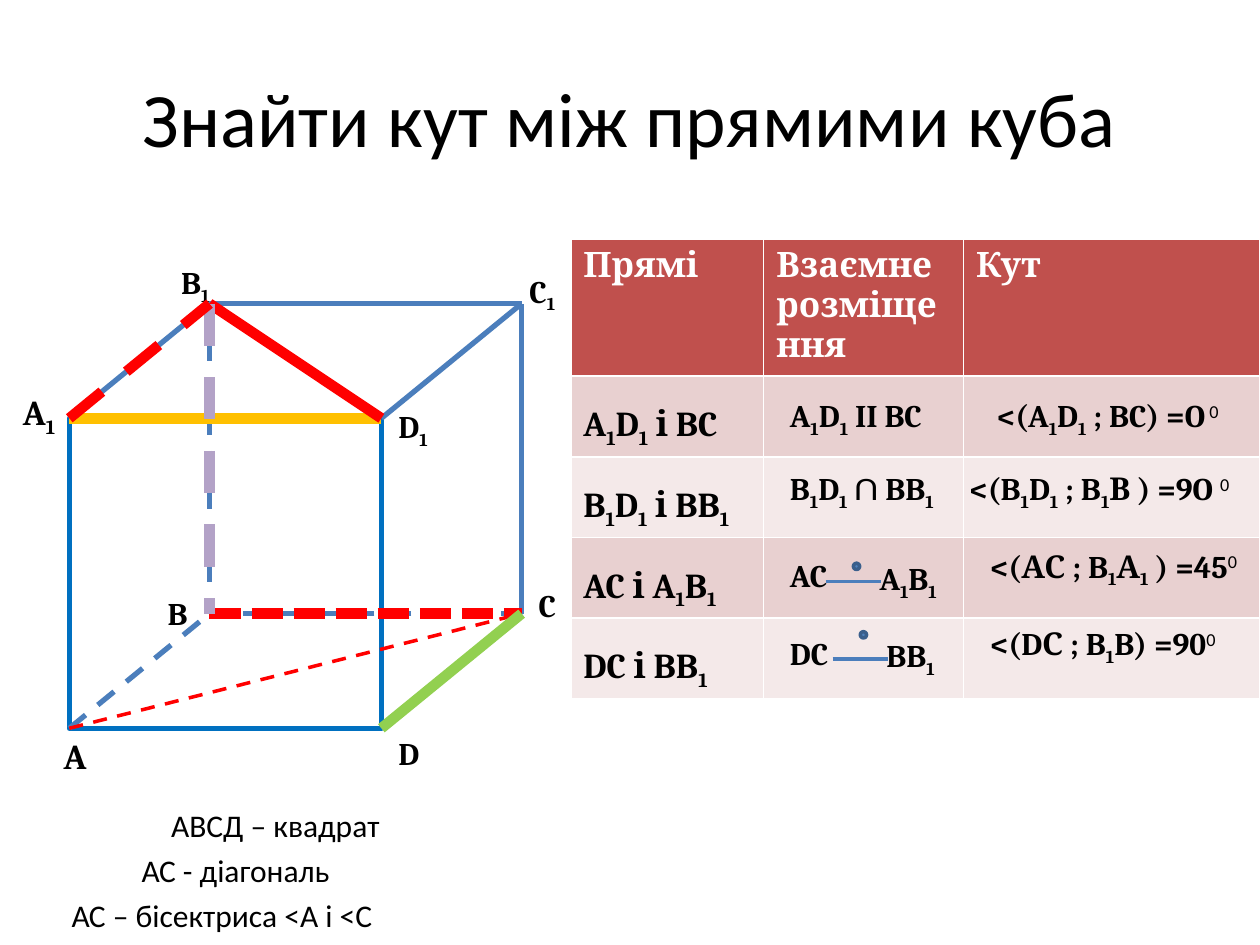
from collections import namedtuple
from dataclasses import dataclass

from lxml.etree import SubElement
from pptx import Presentation
from pptx.dml.color import RGBColor
from pptx.enum.dml import MSO_LINE as Dash
from pptx.enum.shapes import MSO_CONNECTOR as Link, MSO_SHAPE as Preset
from pptx.enum.text import MSO_ANCHOR as Anchor, PP_ALIGN as Align
from pptx.oxml.ns import qn
from pptx.util import Inches, Pt

Box = namedtuple("Box", "left top width height")


@dataclass(frozen=True)
class Theme:
    """Colours, fonts and type sizes of the slide."""
    ink: str = "000000"
    white: str = "FFFFFF"
    edge: str = "4B7EBC"
    front: str = "0070C0"
    red: str = "FF0000"
    gold: str = "FFC000"
    lilac: str = "B3A2C7"
    green: str = "92D050"
    dot: str = "4F81BD"
    dot_line: str = "3A5F8C"
    header: str = "C0504D"
    bands: tuple = ("E8D0D0", "F4E9E9")
    body_font: str = "Calibri"
    math_font: str = "Cambria"
    title_size: int = 44
    large: int = 20
    normal: int = 18


THEME = Theme()


def rgb(code):
    """Turn a hex code into a colour."""
    return RGBColor.from_string(code)


def place(box, across, down):
    """Give the point at a share of a box, in inches."""
    return box.left + across * box.width, box.top + down * box.height


def split_marks(text):
    """Split text where _ lowers one character and ^ raises the rest."""
    main, _, raised = text.partition("^")
    first, *rest = main.split("_")
    pieces = [(first, 0)]
    for part in rest:
        pieces += [(part[:1], -25), (part[1:], 0)]
    pieces.append((raised, 30))
    return [piece for piece in pieces if piece[0]]


def write(frame, text, size=THEME.normal, font=THEME.math_font, color=THEME.ink,
          bold=True, spacing=None, align=None):
    """Write marked text into the first paragraph of a frame."""
    para = frame.paragraphs[0]
    para.alignment = align
    para.line_spacing = spacing
    for piece, baseline in split_marks(text):
        span = para.add_run()
        span.text = piece
        raised = baseline > 0
        span.font.name = THEME.body_font if raised else font
        span.font.size = Pt(size)
        span.font.bold = bold and not raised
        span.font.color.rgb = rgb(color)
        if baseline:
            span._r.get_or_add_rPr().set("baseline", f"{baseline * 1000}")


def add_text(page, point, text, width=0.5, wrap=True, **style):
    """Add a text box with its corner at a point."""
    box = page.shapes.add_textbox(*map(Inches, (*point, width, 0.4)))
    box.text_frame.word_wrap = wrap
    write(box.text_frame, text, **style)


def add_line(page, start, end, color=THEME.edge, width=3, dash=None):
    """Draw a straight line without a shadow."""
    line = page.shapes.add_connector(Link.STRAIGHT, *map(Inches, (*start, *end)))
    line.line.color.rgb = rgb(color)
    line.line.width = Pt(width)
    if dash:
        line.line.dash_style = dash
    SubElement(line._element.spPr, qn("a:effectLst"))


def add_title(page, box, text):
    """Place and fill the title placeholder."""
    title = page.shapes.title
    title.left, title.top, title.width, title.height = map(Inches, box)
    title.text_frame.vertical_anchor = Anchor.MIDDLE
    write(title.text_frame, text, size=THEME.title_size, font=THEME.body_font,
          bold=False, align=Align.CENTER)


def add_cube(page, box):
    """Draw the cube with its named corners and highlighted lines."""
    shares = {"A": (0, 1), "D": (0.69, 1), "B": (0.31, 0.73), "C": (1, 0.73),
              "A1": (0, 0.27), "D1": (0.69, 0.27), "B1": (0.31, 0), "C1": (1, 0)}
    corner = {name: place(box, *share) for name, share in shares.items()}
    left, top = corner["A1"]
    right, bottom = corner["D"]
    face = page.shapes.add_shape(
        Preset.RECTANGLE, *map(Inches, (left, top, right - left, bottom - top)))
    face.shadow.inherit = False
    face.fill.background()
    face.line.color.rgb = rgb(THEME.front)
    face.line.width = Pt(3)

    for start, end in (("A1", "B1"), ("D1", "C1"), ("D", "C"), ("C", "C1"), ("B1", "C1")):
        add_line(page, corner[start], corner[end])
    for start, end in (("B1", "B"), ("C", "B"), ("A", "B")):
        add_line(page, corner[start], corner[end], dash=Dash.DASH)

    labels = (("A", -0.04, 1), ("B", 0.19, 0.67), ("C", 1.01, 0.65), ("D", 0.7, 1),
              ("A_1", -0.13, 0.19), ("B_1", 0.22, -0.11), ("C_1", 0.99, -0.09),
              ("D_1", 0.7, 0.23))
    for text, across, down in labels:
        size = THEME.large if text[0] == "A" else THEME.normal
        add_text(page, place(box, across, down), text, size=size,
                 width=0.48 if "_" in text else 0.38, wrap=False)

    highlights = (("A1", "D1", THEME.gold, 6, None), ("B", "C", THEME.red, 6, Dash.SQUARE_DOT),
                  ("B1", "D1", THEME.red, 6, None), ("B1", "B", THEME.lilac, 6, Dash.DASH),
                  ("A", "C", THEME.red, 2, Dash.DASH), ("A1", "B1", THEME.red, 6, Dash.DASH),
                  ("D", "C", THEME.green, 6, None))
    for start, end, color, width, dash in highlights:
        add_line(page, corner[start], corner[end], color, width, dash)


def add_pairs_table(page, box):
    """Add the table of line pairs."""
    rows = (("Прямі", "Взаємне розміщення", "Кут"), ("A_1D_1 і BC",),
            ("B_1D_1 і BB_1",), ("AC і A_1B_1",), ("DC і BB_1",))
    table = page.shapes.add_table(len(rows), 3, *map(Inches, box)).table
    for column, share in zip(table.columns, (0.28, 0.29, 0.43)):
        column.width = Inches(box.width * share)
    for index, texts in enumerate(rows):
        header = index == 0
        table.rows[index].height = Inches(box.height * (0.3 if header else 0.175))
        for cell in table.rows[index].cells:
            cell.fill.solid()
            cell.fill.fore_color.rgb = rgb(THEME.header if header else THEME.bands[(index - 1) % 2])
        for cell, text in zip(table.rows[index].cells, texts):
            write(cell.text_frame, text, size=THEME.large, spacing=None if header else 1.5,
                  color=THEME.white if header else THEME.ink)


def add_skew_pair(page, box, first, second, shift, down, dot_rise):
    """Write two lines joined by the skew sign: a bar with a dot above."""
    add_text(page, place(box, 0.3, down), first, width=0.7, spacing=1.5)
    add_text(page, place(box, 0.43 + shift, down), second, width=0.9, spacing=1.5)
    bar = down + 0.11
    add_line(page, place(box, 0.37 + shift, bar), place(box, 0.45 + shift, bar), width=2)
    point = place(box, 0.41 + shift, bar - dot_rise)
    dot = page.shapes.add_shape(Preset.OVAL, *map(Inches, (*point, 0.05, 0.05)))
    dot.shadow.inherit = False
    dot.fill.solid()
    dot.fill.fore_color.rgb = rgb(THEME.dot)
    dot.line.color.rgb = rgb(THEME.dot_line)
    dot.line.width = Pt(2)


def add_answers(page, box):
    """Write the relations and the angles over the table."""
    answers = (("A_1D_1 II BC", 0.3, 0.33), ("B_1D_1 ∩ BB_1", 0.3, 0.49),
               ("<(A_1D_1 ; BC) =O^ 0", 0.6, 0.33), ("<(B_1D_1 ; B_1В ) =9O ^0", 0.56, 0.49),
               ("<(АС ; B_1А_1 ) =45^0", 0.59, 0.66), ("<(DС ; B_1B) =90^0", 0.59, 0.83))
    for text, across, down in answers:
        add_text(page, place(box, across, down), text, width=1.64 if across < 0.5 else 2.61)
    add_skew_pair(page, box, "AC", "A_1B_1", 0, 0.64, 0.04)
    add_skew_pair(page, box, "DC", "BB_1", 0.01, 0.81, 0.06)


def add_notes(page, box):
    """Write the three remarks under the cube."""
    notes = (("АВСД – квадрат", 0.27), ("АС - діагональ", 0.19), ("АС – бісектриса <A i <C", 0))
    for index, (text, across) in enumerate(notes):
        add_text(page, place(box, across, index / len(notes)), text, width=box.width,
                 font=THEME.body_font, bold=False)


def main():
    """Build the deck and save it."""
    deck = Presentation()
    deck.slide_width, deck.slide_height = Inches(10), Inches(7.5)
    page = deck.slides.add_slide(deck.slide_layouts[5])
    table_box = Box(4.53, 1.9, 5.47, 3.62)
    add_title(page, Box(0.5, 0.3, 9, 1.25), "Знайти кут між прямими куба")
    add_pairs_table(page, table_box)
    add_cube(page, Box(0.55, 2.41, 3.59, 3.37))
    add_answers(page, table_box)
    add_notes(page, Box(0.47, 6.35, 2.93, 1.07))
    deck.save("out.pptx")


if __name__ == "__main__":
    main()
